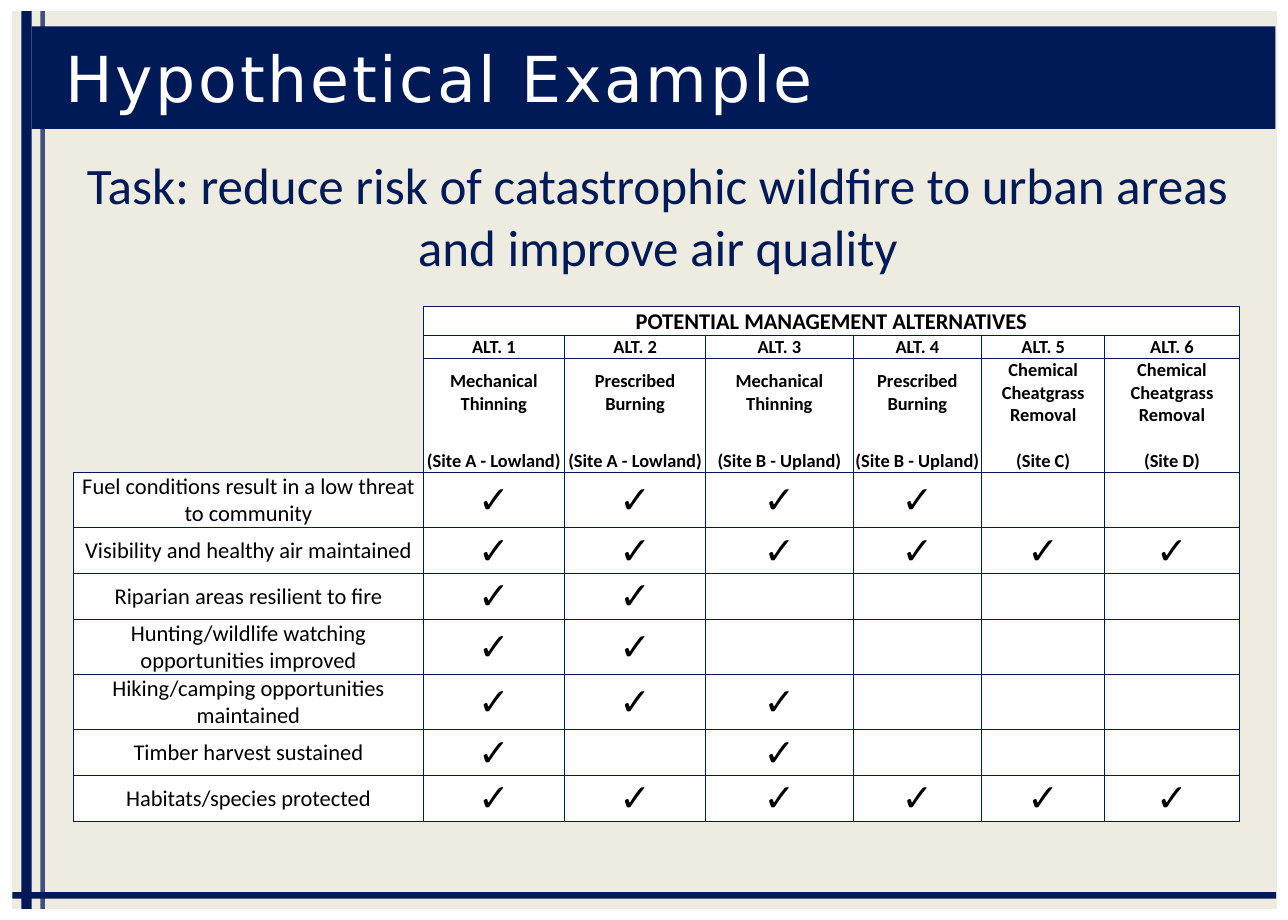
from dataclasses import dataclass

from lxml import etree
from pptx import Presentation
from pptx import util as u
from pptx.dml.color import RGBColor
from pptx.enum import shapes, text
from pptx.oxml.ns import qn

PX = 9144  # EMU, 100 px to the inch


@dataclass(frozen=True)
class Theme:
    navy: str = "001A57"
    cream: str = "EEECE1"
    white: str = "FFFFFF"
    black: str = "000000"
    title_font: str = "DejaVu Sans"
    body_font: str = "Calibri"
    check_font: str = "Arial"
    title_size: int = 62
    task_size: int = 50
    label_size: int = 22
    alternative_size: int = 18
    check_size: int = 37
    border_width: int = 1


THEME = Theme()
CENTER = text.PP_ALIGN.CENTER
MIDDLE = text.MSO_ANCHOR.MIDDLE
BOTTOM = text.MSO_ANCHOR.BOTTOM

COLUMN_WIDTHS = (475, 192, 192, 200, 175, 167, 183)
ROW_HEIGHTS = (38, 31, 93, 62, 74, 62, 62, 74, 74, 62, 62)
HEADER_ROWS = 4
ALTERNATIVES = (
    ("Mechanical Thinning", "(Site A - Lowland)"),
    ("Prescribed Burning", "(Site A - Lowland)"),
    ("Mechanical Thinning", "(Site B - Upland)"),
    ("Prescribed Burning", "(Site B - Upland)"),
    ("Chemical Cheatgrass Removal", "(Site C)"),
    ("Chemical Cheatgrass Removal", "(Site D)"),
)
# Each objective with the numbers of the alternatives that meet it
OBJECTIVES = (
    ("Fuel conditions result in a low threat to community", (1, 2, 3, 4)),
    ("Visibility and healthy air maintained", (1, 2, 3, 4, 5, 6)),
    ("Riparian areas resilient to fire", (1, 2)),
    ("Hunting/wildlife watching opportunities improved", (1, 2)),
    ("Hiking/camping opportunities maintained", (1, 2, 3)),
    ("Timber harvest sustained", (1, 3)),
    ("Habitats/species protected", (1, 2, 3, 4, 5, 6)),
)


def px(*lengths):
    return [u.Emu(length * PX) for length in lengths]


def rgb(color):
    return RGBColor.from_string(color)


def style_font(paragraph, name, size, color, bold=False):
    font = paragraph.font
    font.name, font.size, font.bold = name, u.Pt(size), bold
    font.color.rgb = rgb(color)
    return font


def add_band(slide, box, color):
    band = slide.shapes.add_shape(shapes.MSO_SHAPE.RECTANGLE, *px(*box))
    band.shadow.inherit = False
    band.fill.solid()
    band.fill.fore_color.rgb = rgb(color)
    band.line.fill.background()
    return band


def add_side_rule(slide):
    rule = slide.shapes.add_connector(
        shapes.MSO_CONNECTOR.STRAIGHT, *px(58, 1235, 58, 15))
    rule.line.width = u.Pt(4.5)
    rule.line.color.rgb = rgb(THEME.navy)
    color = rule.line._ln.find(".//" + qn("a:srgbClr"))
    etree.SubElement(color, qn("a:alpha"), val="73000")
    etree.SubElement(rule._element.spPr, qn("a:effectLst"))


def fill_placeholder(slide, placeholder, box, words, anchor, alignment):
    """Place and fill a placeholder above the bands; return its paragraph."""
    slide.shapes._spTree.append(placeholder._element)
    placeholder.left, placeholder.top, placeholder.width, placeholder.height = px(*box)
    frame = placeholder.text_frame
    frame.text = words
    frame.word_wrap = True
    frame.auto_size = text.MSO_AUTO_SIZE.NONE
    frame.vertical_anchor = anchor
    frame.margin_left, frame.margin_top, frame.margin_right, frame.margin_bottom = px(17, 9, 17, 9)
    paragraph = frame.paragraphs[0]
    paragraph.alignment = alignment
    paragraph.space_before = u.Pt(0)
    return paragraph


def add_title(slide):
    paragraph = fill_placeholder(
        slide, slide.shapes.title, (72, 36, 1661, 139),
        "Hypothetical Example", MIDDLE, text.PP_ALIGN.LEFT)
    font = style_font(paragraph, THEME.title_font, THEME.title_size, THEME.white)
    font._rPr.set("spc", "260")


def add_task(slide):
    paragraph = fill_placeholder(
        slide, slide.placeholders[1], (72, 200, 1644, 192),
        "Task: reduce risk of catastrophic wildfire to urban areas and improve air quality",
        text.MSO_ANCHOR.TOP, CENTER)
    properties = paragraph._p.get_or_add_pPr()
    properties.set("marL", "0")
    properties.set("indent", "0")
    etree.SubElement(properties, qn("a:buNone"))
    style_font(paragraph, THEME.body_font, THEME.task_size, THEME.navy)


def format_cell(cell, sides, color):
    """Rule the sides named out of L, R, T and B, then fill the cell."""
    properties = cell._tc.get_or_add_tcPr()
    for side in "LRTB":
        border = etree.SubElement(properties, qn("a:ln" + side),
                                  w=str(u.Pt(THEME.border_width)))
        if side in sides:
            fill = etree.SubElement(border, qn("a:solidFill"))
            etree.SubElement(fill, qn("a:srgbClr"), val=THEME.navy)
        else:
            etree.SubElement(border, qn("a:noFill"))
    cell.fill.solid()
    cell.fill.fore_color.rgb = rgb(color)
    cell.margin_left, cell.margin_top, cell.margin_right, cell.margin_bottom = px(1, 1, 1, 0)


def write_cell(cell, words, font_name, size, bold=False, anchor=MIDDLE):
    cell.text = words
    cell.vertical_anchor = anchor
    paragraph = cell.text_frame.paragraphs[0]
    paragraph.alignment = CENTER
    style_font(paragraph, font_name, size, THEME.black, bold)


def add_alternatives_table(slide):
    table = slide.shapes.add_table(
        len(ROW_HEIGHTS), len(COLUMN_WIDTHS),
        *px(100, 417, sum(COLUMN_WIDTHS), sum(ROW_HEIGHTS))).table
    table.first_row = table.horz_banding = False
    for column, width in zip(table.columns, px(*COLUMN_WIDTHS)):
        column.width = width
    for row, height in zip(table.rows, px(*ROW_HEIGHTS)):
        row.height = height

    # The method and site rows share one box, so no rule runs between them
    open_sides = {2: "LRT", 3: "LRB"}
    for row in range(len(ROW_HEIGHTS)):
        for column in range(len(COLUMN_WIDTHS)):
            if column == 0 and row < HEADER_ROWS:
                format_cell(table.cell(row, column), "RB", THEME.cream)
            else:
                format_cell(table.cell(row, column), open_sides.get(row, "LRTB"), THEME.white)
    table.cell(0, 0).merge(table.cell(HEADER_ROWS - 1, 0))
    table.cell(0, 1).merge(table.cell(0, len(ALTERNATIVES)))

    write_cell(table.cell(0, 1), "POTENTIAL MANAGEMENT ALTERNATIVES",
               THEME.body_font, THEME.label_size, True, BOTTOM)
    for number, (method, site) in enumerate(ALTERNATIVES, 1):
        headings = ((f"ALT. {number}", BOTTOM), (method, MIDDLE), (site, BOTTOM))
        for row, (words, anchor) in enumerate(headings, 1):
            write_cell(table.cell(row, number), words,
                       THEME.body_font, THEME.alternative_size, True, anchor)
    for row, (objective, met_by) in enumerate(OBJECTIVES, HEADER_ROWS):
        write_cell(table.cell(row, 0), objective, THEME.body_font, THEME.label_size)
        for number in met_by:
            write_cell(table.cell(row, number), "✓", THEME.check_font, THEME.check_size)


def main():
    presentation = Presentation()
    presentation.slide_width, presentation.slide_height = px(1750, 1250)
    slide = presentation.slides.add_slide(presentation.slide_layouts[1])

    panel = add_band(slide, (17, 15, 1717, 1220), THEME.cream)
    panel.line.color.rgb = rgb(THEME.cream)
    panel.line.width = u.Pt(1)
    add_band(slide, (29, 15, 14, 1220), THEME.navy)
    add_band(slide, (43, 36, 29, 139), THEME.navy)
    add_band(slide, (17, 1212, 1717, 9), THEME.navy)
    add_side_rule(slide)

    add_title(slide)
    slide.shapes.title.fill.solid()
    slide.shapes.title.fill.fore_color.rgb = rgb(THEME.navy)
    add_task(slide)
    add_alternatives_table(slide)
    presentation.save("out.pptx")


if __name__ == "__main__":
    main()
